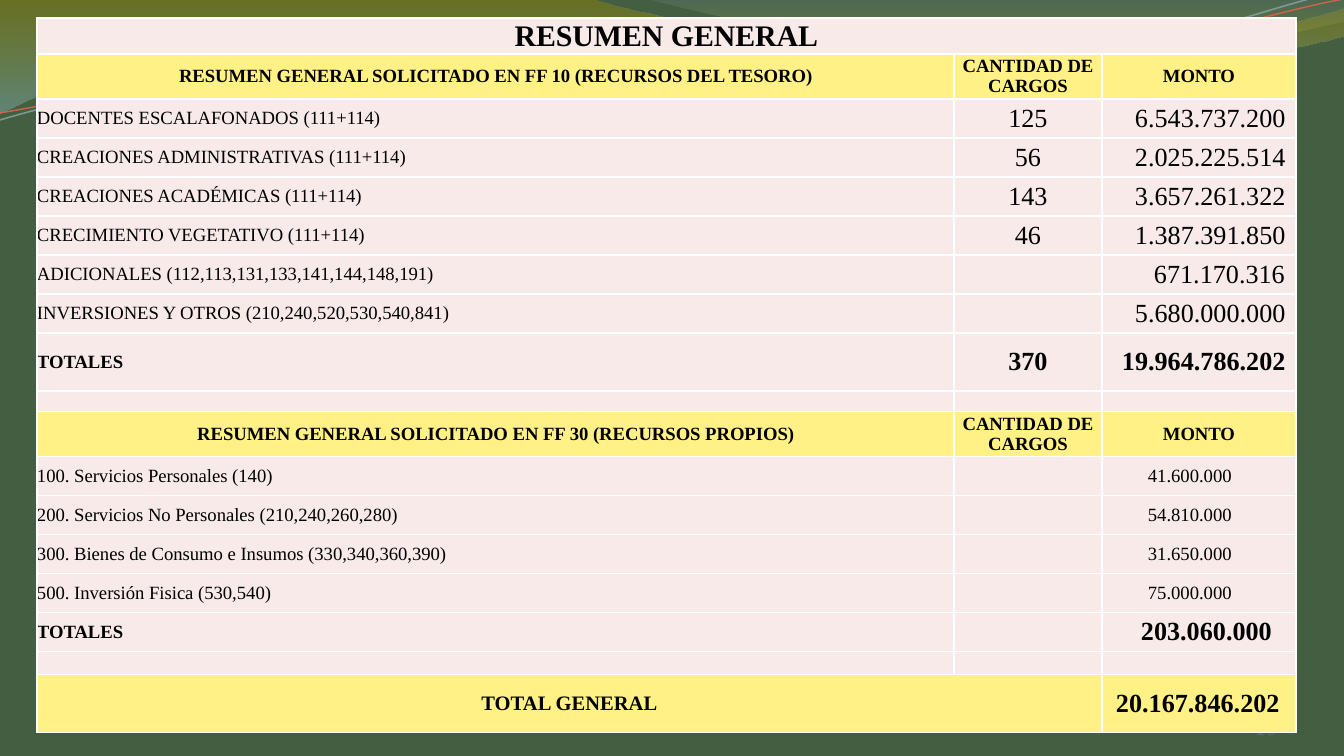
from lxml.etree import SubElement
from pptx import Presentation
from pptx.dml.color import RGBColor
from pptx.enum.text import MSO_ANCHOR, PP_ALIGN
from pptx.oxml.ns import qn
from pptx.util import Emu, Pt

SCALE = 914400 / 134.4
PINK, GOLD = "F7EAE9", "FFF185"
LEFT, MID, RIGHT = PP_ALIGN.LEFT, PP_ALIGN.CENTER, PP_ALIGN.RIGHT
COLS = [917, 148, 194]
HEADS = ["CANTIDAD DE CARGOS", "MONTO"]
TESORO = [
    ("DOCENTES ESCALAFONADOS (111+114)", "125", "6.543.737.200", 33),
    ("CREACIONES ADMINISTRATIVAS (111+114)", "56", "2.025.225.514", 33),
    ("CREACIONES ACADÉMICAS (111+114)", "143", "3.657.261.322", 33),
    ("CRECIMIENTO VEGETATIVO (111+114)", "46", "1.387.391.850", 33),
    ("ADICIONALES (112,113,131,133,141,144,148,191)", "", "671.170.316", 52),
    ("INVERSIONES Y OTROS (210,240,520,530,540,841)", "", "5.680.000.000", 33),
]
PROPIOS = [
    ("100. Servicios Personales (140)", "", "41.600.000"),
    ("200. Servicios No Personales (210,240,260,280)", "", "54.810.000"),
    ("300. Bienes de Consumo e Insumos (330,340,360,390)", "", "31.650.000"),
    ("500. Inversión Fisica (530,540)", "", "75.000.000"),
]


def px(n):
    """Turn px into EMU."""
    return Emu(round(n * SCALE))


def color(code):
    """Turn a hex string into a colour."""
    return RGBColor.from_string(code)


def trace(slide, box, start, parts, close):
    """Draw an outline of lines and cubic curves, offset by the box."""
    left, top = box[:2]
    spots = [(px(left + x), px(top + y)) for part in [[start], *parts] for x, y in part]
    pen = slide.shapes.build_freeform(*spots[0])
    pen.add_line_segments(spots[1:], close=close)
    shape = pen.convert_to_shape()
    shape.shadow.inherit = False
    nodes = iter(list(shape._element.iter(qn("a:lnTo"))))
    for part in parts:
        first, *rest = [next(nodes) for _ in part]
        if rest:
            first.tag = qn("a:cubicBezTo")
        for node in rest:
            first.append(node[0])
            node.getparent().remove(node)
    return shape


def add_wave(slide, box, start, parts, stops):
    """Draw a see-through wave shaded from top to bottom."""
    shape = trace(slide, box, start, parts, True)
    shape.line.fill.background()
    shape.fill.gradient()
    shape.fill.gradient_angle = 270
    for stop, (pos, code, alpha) in zip(shape.fill.gradient_stops, stops):
        stop.position = pos
        stop.color.rgb = color(code)
        for node in shape._element.iter(qn("a:srgbClr")):
            if node.get("val") == code:
                SubElement(node, qn("a:alpha")).set("val", str(alpha * 1000))


def add_strand(slide, box, start, parts, code, width):
    """Draw a thin open curve."""
    shape = trace(slide, box, start, parts, False)
    shape.fill.background()
    shape.line.color.rgb = color(code)
    shape.line.width = Pt(width)


def add_top(slide, box):
    """Draw the waves and strands along the top."""
    add_wave(slide, box, (0, 0), [
        [(591, -1)],
        [(640, 17), (892, 63), (1019, 63)],
        [(1146, 63), (1288, 26), (1344, 9)],
        [(1345, 36)],
        [(1321, 44), (1169, 77), (1003, 77)],
        [(833, 75), (513, 28), (345, 35)],
        [(173, 36), (62, 83), (-1, 114)],
    ], [(0, "978500", 45), (1, "77A5A6", 55)])
    add_wave(slide, box, (644, -1), [
        [(685, 11), (917, 62), (1034, 66)],
        [(1151, 70), (1292, 32), (1344, 22)],
        [(1344, 0)],
    ], [(0, "648484", 30), (0.8, "B49F00", 45)])
    add_strand(slide, box, (0, 120), [
        [(65, 101), (212, 63), (372, 55)],
        [(532, 48), (796, 87), (957, 77)],
        [(1120, 66), (1262, 8), (1341, -9)],
    ], "7C999A", 0.85)
    add_strand(slide, box, (0, 113), [
        [(63, 103), (220, 67), (380, 60)],
        [(542, 54), (802, 82), (962, 73)],
        [(1124, 62), (1265, 13), (1344, -1)],
    ], "D16349", 0.75)


def set_text(para, text, size, align, bold=False, code="000000", font="Times New Roman"):
    """Fill a paragraph and set its look."""
    para.text = text
    para.alignment = align
    para.font.size = Pt(size)
    para.font.bold = bold
    para.font.name = font
    para.font.color.rgb = color(code)


def add_page(slide, box):
    """Write the page number."""
    frame = slide.shapes.add_textbox(*map(px, box)).text_frame
    frame.margin_left = frame.margin_right = frame.margin_top = frame.margin_bottom = 0
    frame.word_wrap = True
    frame.vertical_anchor = MSO_ANCHOR.BOTTOM
    set_text(frame.paragraphs[0], "10", 12, RIGHT, code="606680", font="TeX Gyre Pagella")


def set_cell(cell, text, size, align, bold, fill, indent=0):
    """Fill one cell, indenting its text where asked."""
    cell.margin_left = cell.margin_right = cell.margin_top = cell.margin_bottom = 0
    cell.vertical_anchor = MSO_ANCHOR.MIDDLE
    para = cell.text_frame.paragraphs[0]
    set_text(para, text, size if text else 6, align, bold)
    if indent:
        para._p.get_or_add_pPr().set("marL", str(px(indent)))
    cell.fill.solid()
    cell.fill.fore_color.rgb = color(fill)


def body(name, count, total, indent, size=14, bold=False, high=39):
    """Describe a row with a name, a count and an amount."""
    return high, PINK, bold, [(name, 10, LEFT), (count, 14, MID), (total, size, LEFT, indent)]


def head(name):
    """Describe a heading row."""
    return 43, GOLD, True, [(text, 10, MID) for text in [name, *HEADS]]


def gap(high):
    """Describe an empty row."""
    return high, PINK, False, [("", 6, LEFT)] * 3


def add_summary(slide, box):
    """Place the summary table in the box."""
    rows = [
        (34, PINK, True, [("RESUMEN GENERAL", 16, MID), ("", 6, MID), ("", 6, MID)]),
        head("RESUMEN GENERAL SOLICITADO EN FF 10 (RECURSOS DEL TESORO)"),
        *[body(*item) for item in TESORO],
        body("TOTALES", "370", "19.964.786.202", 20, bold=True, high=58),
        gap(21),
        head("RESUMEN GENERAL SOLICITADO EN FF 30 (RECURSOS PROPIOS)"),
        *[body(*item, 46, 10) for item in PROPIOS],
        body("TOTALES", "", "203.060.000", 39, bold=True),
        gap(23),
        (58, GOLD, True, [("TOTAL GENERAL", 11, MID), ("", 6, MID),
                          ("20.167.846.202", 14, LEFT, 14)]),
    ]
    table = slide.shapes.add_table(len(rows), len(COLS), *map(px, box)).table
    table.first_row = table.horz_banding = False
    for col, wide in zip(table.columns, COLS):
        col.width = px(wide)
    for i, (high, fill, bold, cells) in enumerate(rows):
        table.rows[i].height = px(high)
        for j, (text, size, align, *indent) in enumerate(cells):
            set_cell(table.cell(i, j), text, size, align, bold, fill, *indent)
    last = len(rows) - 1
    table.cell(0, 0).merge(table.cell(0, 2))
    table.cell(last, 0).merge(table.cell(last, 1))


def main():
    """Build and save the slide."""
    deck = Presentation()
    deck.slide_width, deck.slide_height = px(1344), px(756)
    slide = deck.slides.add_slide(deck.slide_layouts[6])
    slide.background.fill.solid()
    slide.background.fill.fore_color.rgb = color("435E40")
    add_top(slide, (0, 0, 1344, 120))
    add_page(slide, (1165, 700, 112, 40))
    add_summary(slide, (37, 18, 1259, 709))
    deck.save("out.pptx")


if __name__ == "__main__":
    main()
